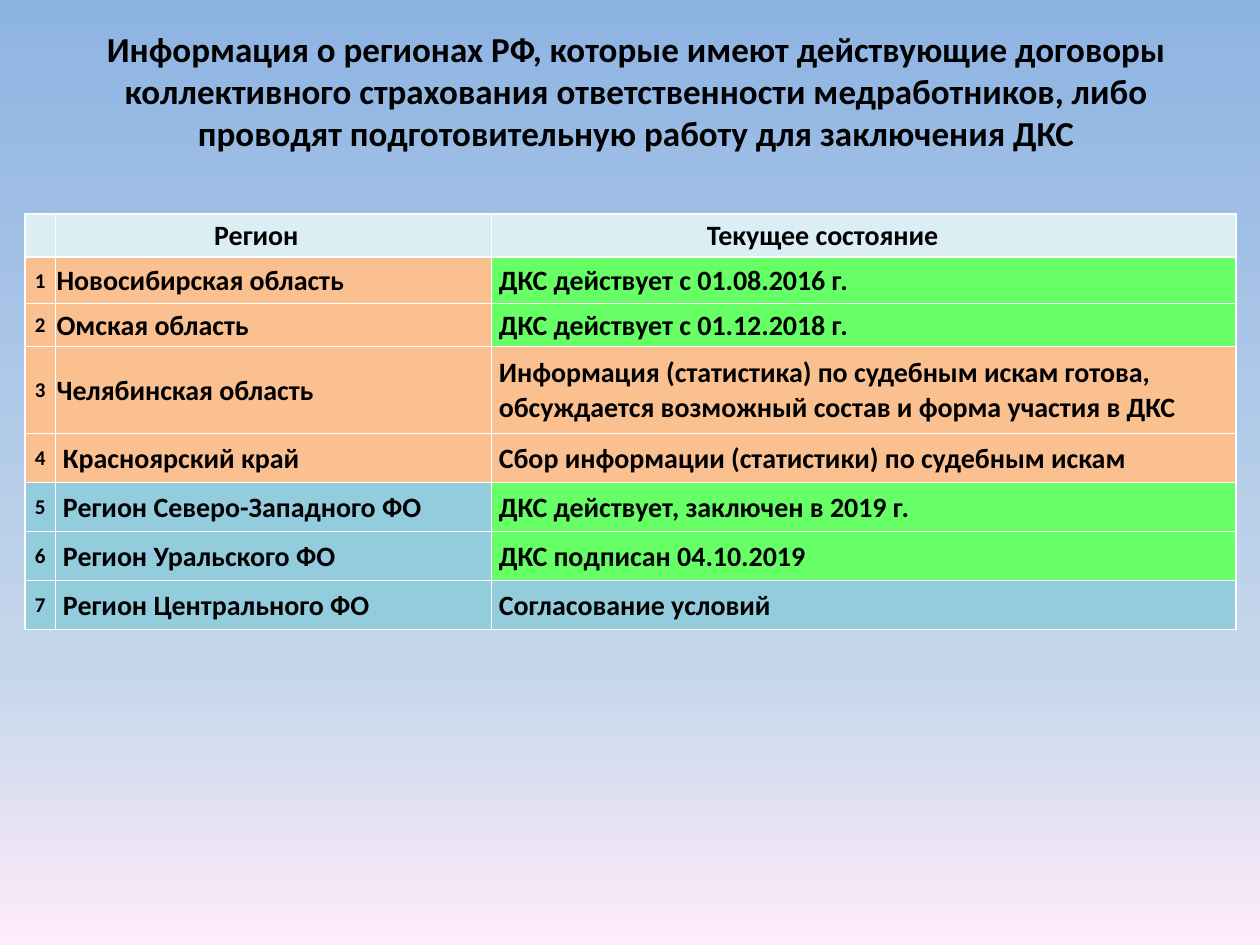
from pptx import Presentation
from pptx.dml.color import RGBColor
from pptx.enum.text import MSO_ANCHOR, PP_ALIGN
from pptx.oxml.ns import qn
from pptx.util import Inches, Pt
from lxml import etree

LEFT, CENTER = PP_ALIGN.LEFT, PP_ALIGN.CENTER
MIDDLE = MSO_ANCHOR.MIDDLE
HEADER, ORANGE, BLUE, GREEN = "DBEEF4", "FAC090", "93CDDD", "66FF66"
TIGHT, SPACED = 0.01, 0.06

TITLE = [
    "Информация о регионах РФ, которые имеют действующие договоры",
    "коллективного страхования ответственности медработников, либо "
    "проводят подготовительную работу для заключения ДКС",
]
# region, its fill, its left margin, status lines, status fill
REGIONS = [
    ("Новосибирская область", ORANGE, TIGHT, ["ДКС действует с 01.08.2016 г."], GREEN),
    ("Омская область", ORANGE, TIGHT, ["ДКС действует с 01.12.2018 г."], GREEN),
    ("Челябинская область", ORANGE, TIGHT,
     ["Информация (статистика) по судебным искам готова,",
      "обсуждается возможный состав и форма участия в ДКС"], ORANGE),
    ("Красноярский край", ORANGE, SPACED,
     ["Сбор информации (статистики) по судебным искам"], ORANGE),
    ("Регион Северо-Западного ФО", BLUE, SPACED,
     ["ДКС действует, заключен в 2019 г."], GREEN),
    ("Регион Уральского ФО", BLUE, SPACED, ["ДКС подписан 04.10.2019"], GREEN),
    ("Регион Центрального ФО", BLUE, SPACED, ["Согласование условий"], BLUE),
]
COLUMNS = [0.24, 3.46, 5.91]
ROWS = [0.34, 0.37, 0.34, 0.69] + [0.39] * 4


def rgb(value):
    return RGBColor.from_string(value)


class SlideBuilder:
    font = "Calibri"
    ink = "000000"
    border = "FFFFFF"

    def __init__(self, slide):
        self.slide = slide

    def background(self, stops):
        """Fill from top to bottom with (percent, colour) stops."""
        fill = self.slide.background.fill
        fill.gradient()
        fill.gradient_angle = 270
        stop_list = next(self.slide.element.iter(qn("a:gsLst")))
        for old in list(stop_list):
            stop_list.remove(old)
        for percent, color in stops:
            stop = etree.SubElement(stop_list, qn("a:gs"), pos=str(percent * 1000))
            etree.SubElement(stop, qn("a:srgbClr"), val=color)

    def add_lines(self, tf, lines, size, align):
        for i, line in enumerate(lines):
            p = tf.add_paragraph() if i else tf.paragraphs[0]
            p.alignment = align
            r = p.add_run()
            r.text = line
            r.font.name = self.font
            r.font.size = Pt(size)
            r.font.bold = True
            r.font.color.rgb = rgb(self.ink)

    def text(self, lines, left, top, width, height, size):
        box = self.slide.shapes.add_textbox(
            Inches(left), Inches(top), Inches(width), Inches(height))
        tf = box.text_frame
        tf.word_wrap = True
        tf.vertical_anchor = MIDDLE
        self.add_lines(tf, lines, size, CENTER)

    def table(self, left, top, columns, rows):
        table = self.slide.shapes.add_table(
            len(rows), len(columns), Inches(left), Inches(top),
            Inches(sum(columns)), Inches(sum(rows))).table
        for column, width in zip(table.columns, columns):
            column.width = Inches(width)
        for row, height in zip(table.rows, rows):
            row.height = Inches(height)
        return table

    def cell(self, cell, lines, fill, margin=TIGHT, size=16, align=LEFT):
        cell.margin_left = Inches(margin)
        cell.margin_right = cell.margin_top = Inches(TIGHT)
        cell.margin_bottom = 0
        cell.vertical_anchor = MIDDLE
        for side in ("a:lnL", "a:lnR", "a:lnT", "a:lnB"):
            line = etree.SubElement(cell._tc.get_or_add_tcPr(), qn(side), w=str(int(Pt(1))))
            solid = etree.SubElement(line, qn("a:solidFill"))
            etree.SubElement(solid, qn("a:srgbClr"), val=self.border)
        cell.fill.solid()
        cell.fill.fore_color.rgb = rgb(fill)
        self.add_lines(cell.text_frame, lines, size, align)


def main():
    prs = Presentation()
    prs.slide_width, prs.slide_height = Inches(10), Inches(7.5)
    s = SlideBuilder(prs.slides.add_slide(prs.slide_layouts[6]))
    s.background([(0, "8EB4E3"), (70, "C4D6EB"), (100, "FFEBFA")])
    s.text(TITLE, 0.59, 0.13, 8.92, 1.18, 20)

    table = s.table(0.2, 1.7, COLUMNS, ROWS)
    s.cell(table.cell(0, 0), [], HEADER)
    s.cell(table.cell(0, 1), ["Регион"], HEADER, 1.26)
    s.cell(table.cell(0, 2), ["Текущее состояние"], HEADER, 1.71)
    for n, (region, fill, margin, status, status_fill) in enumerate(REGIONS, 1):
        s.cell(table.cell(n, 0), [str(n)], fill, size=12, align=CENTER)
        s.cell(table.cell(n, 1), [region], fill, margin)
        s.cell(table.cell(n, 2), status, status_fill, SPACED)
    prs.save("out.pptx")


if __name__ == "__main__":
    main()
